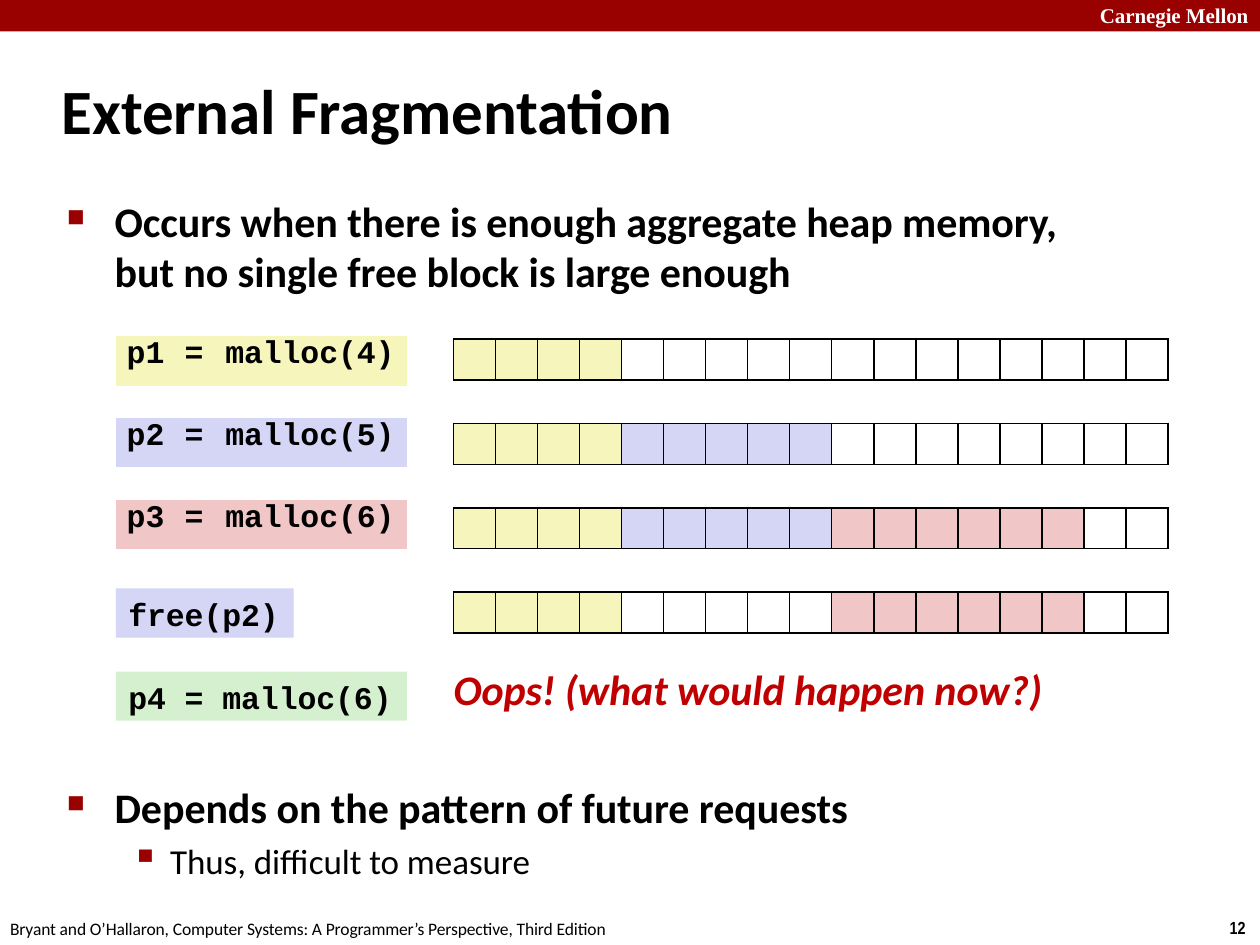
"""Build the External Fragmentation slide with its heap diagrams."""
from dataclasses import dataclass
from typing import NamedTuple, Optional

import lxml.etree
import pptx
import pptx.dml.color
import pptx.enum.shapes
import pptx.enum.text
import pptx.oxml.ns
import pptx.util

qn = pptx.oxml.ns.qn
COL = pptx.util.Inches(10) / 100
ROW = pptx.util.Inches(7.5) / 75
HEAP_CELLS = 17


@dataclass(frozen=True)
class Theme:
    ink: str = "000000"
    paper: str = "FFFFFF"
    accent: str = "990000"
    warning: str = "C00000"
    p1: str = "F6F5BC"
    p2: str = "D5D5F5"
    p3: str = "F0C6C6"
    p4: str = "D4F0CF"
    title: int = 36
    body: int = 24
    detail: int = 20
    code: int = 18
    header: int = 12
    small: int = 10


class Box(NamedTuple):
    x: float
    y: float
    w: float
    h: float

    def emu(self) -> list[int]:
        return [round(self.x * COL), round(self.y * ROW), round(self.w * COL), round(self.h * ROW)]


class Bullet(NamedTuple):
    mark: str
    percent: int
    indent: float
    hang: float
    level: int = 0


class Line(NamedTuple):
    text: str
    fmt: dict
    bullet: Optional[Bullet] = None
    para: dict = {}


class Label(NamedTuple):
    box: Box
    lines: list[Line]
    left: float = 0.1
    top: float = 0.2
    fill: Optional[str] = None


class Block(NamedTuple):
    cells: int
    fill: Optional[str]


T = Theme()


def font(size: int, name: str = "Calibri", color: str = T.ink, **extra) -> dict:
    return dict(size=pptx.util.Pt(size), name=name, color=color, **extra)


CODE = font(T.code, "Courier New", bold=True)
BODY = font(T.body, bold=True)
SQUARE = Bullet("■", 58, 3.9, 3.8)
DETAIL = Bullet("▪", 110, 8.3, 3.1, 1)


def rgb(color: str) -> pptx.dml.color.RGBColor:
    return pptx.dml.color.RGBColor.from_string(color)


def paint(fill, color: Optional[str]) -> None:
    if color is None:
        fill.background()
    else:
        fill.solid()
        fill.fore_color.rgb = rgb(color)


def add_bullet(p, bullet: Bullet) -> None:
    p.level = bullet.level
    pPr = p._p.get_or_add_pPr()
    pPr.set("marL", str(round(bullet.indent * COL)))
    pPr.set("indent", str(round(-bullet.hang * COL)))
    color = lxml.etree.SubElement(pPr, qn("a:buClr"))
    lxml.etree.SubElement(color, qn("a:srgbClr"), val=T.accent)
    lxml.etree.SubElement(pPr, qn("a:buSzPct"), val=str(bullet.percent * 1000))
    lxml.etree.SubElement(pPr, qn("a:buChar"), char=bullet.mark)


def write(p, line: Line) -> None:
    if line.bullet:
        add_bullet(p, line.bullet)
    for key, value in line.para.items():
        setattr(p, key, value)
    r = p.add_run()
    r.text = line.text
    for key, value in line.fmt.items():
        if key == "color":
            r.font.color.rgb = rgb(value)
        else:
            setattr(r.font, key, value)
    r._r.get_or_add_rPr().set("spc", "-5")


def set_margins(target, left: float = 0, top: float = 0) -> None:
    margins = dict(margin_left=round(left * COL), margin_top=round(top * ROW),
                   margin_right=0, margin_bottom=0)
    for key, value in margins.items():
        setattr(target, key, value)


def add_rect(s, box: Box, fill: str):
    sp = s.shapes.add_shape(pptx.enum.shapes.MSO_SHAPE.RECTANGLE, *box.emu())
    sp.shadow.inherit = False
    paint(sp.fill, fill)
    sp.line.fill.background()
    return sp


def add_label(s, label: Label) -> None:
    sp = add_rect(s, label.box, label.fill) if label.fill else s.shapes.add_textbox(*label.box.emu())
    tf = sp.text_frame
    tf.word_wrap = True
    tf.vertical_anchor = pptx.enum.text.MSO_ANCHOR.TOP
    set_margins(tf, label.left, label.top)
    for i, line in enumerate(label.lines):
        p = tf.add_paragraph() if i else tf.paragraphs[0]
        p.alignment = pptx.enum.text.PP_ALIGN.LEFT
        write(p, line)


def add_grid(s, box: Box, widths: list[float], heights: list[float]):
    tbl = s.shapes.add_table(len(heights), len(widths), *box.emu()).table
    tbl.first_row = tbl.horz_banding = False
    tbl._tbl.tblPr.find(qn("a:tableStyleId")).text = "{2D5ABB26-0587-4C30-8999-92F81FD0307C}"
    for column, width in zip(tbl.columns, widths):
        column.width = round(width * COL)
    for row, height in zip(tbl.rows, heights):
        row.height = round(height * ROW)
    return tbl


def fill_cell(cell, fill: Optional[str], text: str = "", border: bool = False) -> None:
    paint(cell.fill, fill)
    set_margins(cell, 0, 0.1)
    p = cell.text_frame.paragraphs[0]
    if text:
        write(p, Line(text, CODE, para=dict(alignment=pptx.enum.text.PP_ALIGN.CENTER)))
    else:
        lxml.etree.SubElement(p._p, qn("a:endParaRPr"), sz=str(T.small * 100))
    for i, side in enumerate(("lnL", "lnR", "lnT", "lnB") if border else ()):
        ln = lxml.etree.Element(qn(f"a:{side}"), w=str(pptx.util.Pt(1)))
        solid = lxml.etree.SubElement(ln, qn("a:solidFill"))
        lxml.etree.SubElement(solid, qn("a:srgbClr"), val=T.ink)
        cell._tc.get_or_add_tcPr().insert(i, ln)


def add_heap(s, step: int, blocks: list[Block]) -> None:
    box = Box(36, 26.9 + 6.7 * step, 56.7, 3.25)
    tbl = add_grid(s, box, [box.w / HEAP_CELLS] * HEAP_CELLS, [box.h])
    fills = [block.fill for block in blocks for _ in range(block.cells)]
    fills += [None] * (HEAP_CELLS - len(fills))
    for i, fill in enumerate(fills):
        fill_cell(tbl.cell(0, i), fill, border=True)


def add_calls(s, calls: list[tuple[str, str]]) -> None:
    heights = ([3.9, 2.6] * len(calls))[:-1]
    tbl = add_grid(s, Box(9.2, 26.7, 23.1, sum(heights)), [4.7, 3, 15.4], heights)
    for row in range(len(heights)):
        text, fill = calls[row // 2] if row % 2 == 0 else ("", None)
        words = text.split() or [""] * 3
        for i, word in enumerate(words):
            fill_cell(tbl.cell(row, i), fill, word)


LABELS = [
    Label(Box(87.2, 0, 12.2, 2.3),
          [Line("Carnegie Mellon", font(T.header, "Times New Roman", T.paper, bold=True))]),
    Label(Box(97.3, 72.8, 1.8, 1.9), [Line("12", font(T.small, "Arial Narrow", bold=True))], 0.3, 0),
    Label(Box(0.7, 73.1, 48.6, 1.7),
          [Line("Bryant and O’Hallaron, Computer Systems: A Programmer’s Perspective, Third Edition",
                font(T.small), para=dict(line_spacing=pptx.util.Pt(10.4)))], 0.1, 0),
    Label(Box(4.8, 5.5, 49.3, 6.3), [Line("External Fragmentation", font(T.title, bold=True))]),
    Label(Box(5.2, 15, 79.6, 8.2),
          [Line("Occurs when there is enough aggregate heap memory, but no single free block is large enough",
                BODY, SQUARE, dict(line_spacing=pptx.util.Pt(28.3)))], 0, 0.6),
    Label(Box(5.2, 61, 62.7, 8.7),
          [Line("Depends on the pattern of future requests", BODY, SQUARE),
           Line("Thus, difficult to measure", font(T.detail), DETAIL,
                dict(space_before=pptx.util.Pt(4.5)))], 0, 1),
    Label(Box(9.2, 46.7, 14.1, 3.9), [Line("free(p2)", CODE)], 1, 0.5, T.p2),
    Label(Box(9.2, 53.3, 23.1, 3.9), [Line("p4 = malloc(6)", CODE)], 1, 0.5, T.p4),
    Label(Box(35.9, 52.5, 47.1, 4.3),
          [Line("Oops! (what would happen now?)", font(T.body, color=T.warning, bold=True, italic=True))]),
]
P1, P2, P3 = Block(4, T.p1), Block(5, T.p2), Block(6, T.p3)
HEAPS = [[P1], [P1, P2], [P1, P2, P3], [P1, Block(P2.cells, None), P3]]
CALLS = [("p1 = malloc(4)", T.p1), ("p2 = malloc(5)", T.p2), ("p3 = malloc(6)", T.p3)]


def main() -> None:
    prs = pptx.Presentation()
    prs.slide_width, prs.slide_height = round(100 * COL), round(75 * ROW)
    s = prs.slides.add_slide(prs.slide_layouts[6])
    add_rect(s, Box(0, 0, 100, 2.5), T.accent)
    for label in LABELS:
        add_label(s, label)
    for step, blocks in enumerate(HEAPS):
        add_heap(s, step, blocks)
    add_calls(s, CALLS)
    prs.save("out.pptx")


if __name__ == "__main__":
    main()
